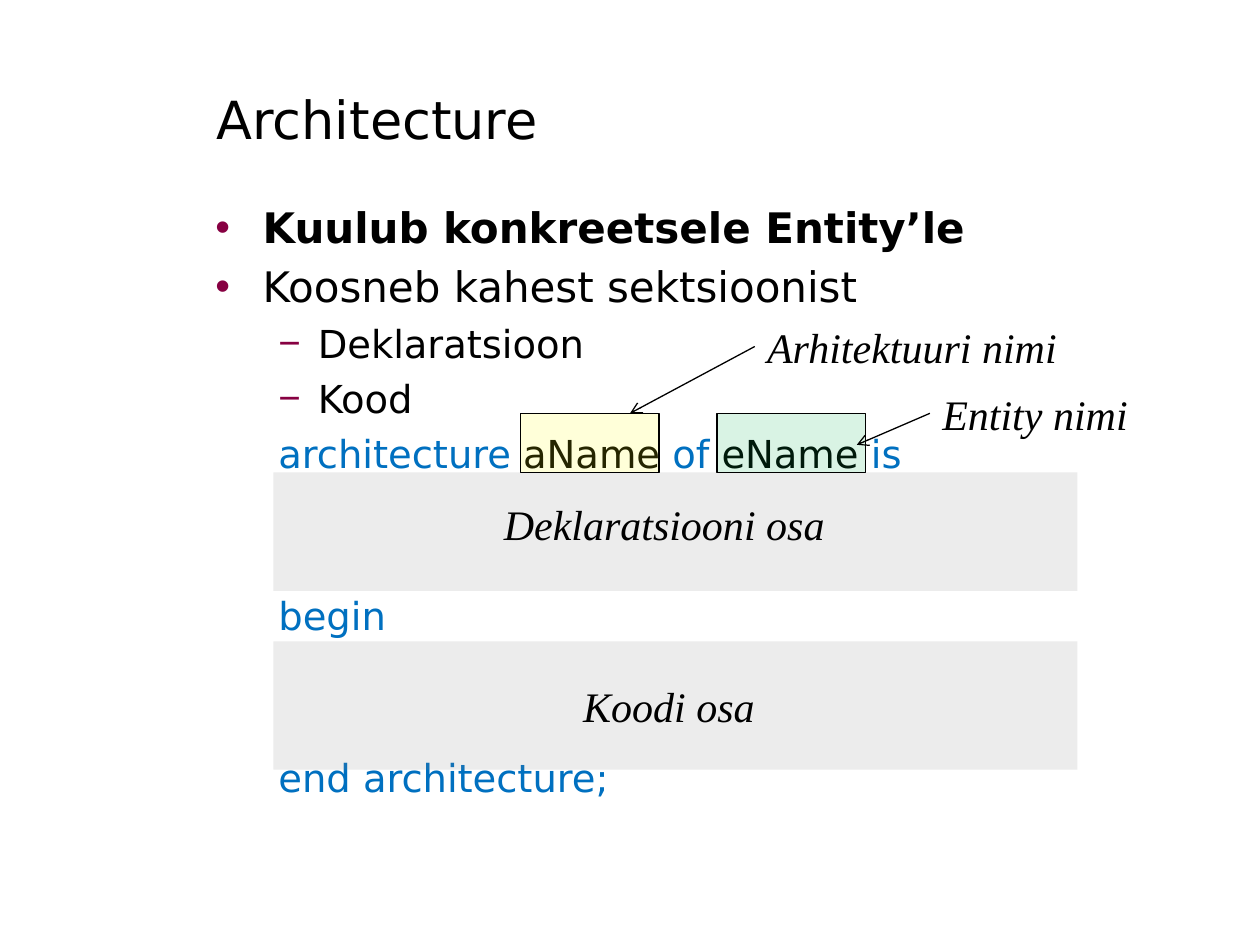
from lxml.etree import SubElement
from pptx import Presentation
from pptx.dml.color import RGBColor
from pptx.enum.shapes import MSO_CONNECTOR, MSO_SHAPE
from pptx.enum.text import MSO_ANCHOR, MSO_AUTO_SIZE, PP_ALIGN
from pptx.oxml.ns import qn
from pptx.util import Pt

SANS, SERIF = "DejaVu Sans", "Times New Roman"
BLACK, KEYWORD, BULLET = "000000", "0070C0", "870042"
GREY, YELLOW, GREEN = "808080", "FFFF00", "00B050"

TITLE = "Architecture"
TITLE_BOX = (116.6, 33.8, 535.7, 67.7)
BODY_BOX = (115.9, 111.6, 538.6, 380.9)
GAP, BAND_GAP = 5, 66.4

# level -> size, left margin, hanging indent, bullet
BULLET_STYLES = {0: (24, 27, -27, "•"), 1: (22, 58.5, -22.5, "−")}
CODE_STYLE = (22, 36, 0, None)
BULLETS = [
    (0, "Kuulub konkreetsele Entity’le", True),
    (0, "Koosneb kahest sektsioonist", False),
    (1, "Deklaratsioon", False),
    (1, "Kood", False),
]
# space before, coloured pieces
CODE = [
    (GAP, [("architecture", KEYWORD), (" aName ", BLACK), ("of ", KEYWORD),
           ("eName ", BLACK), ("is", KEYWORD)]),
    (BAND_GAP, [("begin", KEYWORD)]),
    (BAND_GAP, [("end architecture;", KEYWORD)]),
]
# box, fill, outlined
HIGHLIGHTS = [
    ((156.2, 270, 459.4, 67.7), GREY, False),
    ((156.2, 366.5, 459.4, 73.4), GREY, False),
    ((297.4, 236.2, 79.2, 33.8), YELLOW, True),
    ((409.7, 236.2, 85, 33.8), GREEN, True),
]
LABELS = [
    ("Deklaratsiooni osa", (280.8, 281.5, 209.5, 36)),
    ("Koodi osa", (326.2, 385.2, 153.4, 36)),
    ("Arhitektuuri nimi", (431.3, 180, 199.4, 36)),
    ("Entity nimi", (531.4, 218.2, 141.8, 36)),
]
ARROWS = [(431.3, 198, 360, 236.2), (531.4, 236.2, 489.6, 254.2)]


def rgb(value):
    return RGBColor.from_string(value)


def points(values):
    return [Pt(value) for value in values]


def place(shape, box):
    shape.left, shape.top, shape.width, shape.height = points(box)


def set_font(font, name, size, color=None, bold=False, italic=False):
    font.name, font.size, font.bold, font.italic = name, Pt(size), bold, italic
    if color:
        font.color.rgb = rgb(color)


def add_line(frame, index, style, level, gap, pieces, bold=False):
    """Add one body paragraph made of (text, colour) pieces."""
    size, margin, indent, bullet = style
    paragraph = frame.paragraphs[0] if index == 0 else frame.add_paragraph()
    paragraph.level = level
    paragraph.space_before = Pt(gap if index else 0)
    properties = paragraph._p.get_or_add_pPr()
    properties.set("marL", str(Pt(margin)))
    properties.set("indent", str(Pt(indent)))
    if bullet:
        color = SubElement(properties, qn("a:buClr"))
        SubElement(color, qn("a:srgbClr"), val=BULLET)
        SubElement(properties, qn("a:buChar"), char=bullet)
    else:
        SubElement(properties, qn("a:buNone"))
    shared = pieces[0][1] if len(pieces) == 1 else None
    set_font(paragraph.font, SANS, size, shared, bold)
    for text, color in pieces:
        run = paragraph.add_run()
        run.text = text
        if not shared:
            run.font.color.rgb = rgb(color)


def add_highlight(shapes, box, color, outlined):
    rect = shapes.add_shape(MSO_SHAPE.RECTANGLE, *points(box))
    rect.shadow.inherit = False
    rect.fill.solid()
    rect.fill.fore_color.rgb = rgb(color)
    fill_color = rect._element.spPr.find(qn("a:solidFill"))[0]
    SubElement(fill_color, qn("a:alpha"), val="15000")
    if outlined:
        rect.line.color.rgb = rgb(BLACK)
        rect.line.width = Pt(0.75)
    else:
        rect.line.fill.background()


def add_label(shapes, text, box):
    frame = shapes.add_textbox(*points(box)).text_frame
    frame.word_wrap = True
    frame.text = text
    set_font(frame.paragraphs[0].font, SERIF, 24, BLACK, italic=True)


def add_arrow(shapes, ends):
    arrow = shapes.add_connector(MSO_CONNECTOR.STRAIGHT, *points(ends))
    arrow.line.color.rgb = rgb(BLACK)
    arrow.line.width = Pt(0.75)
    SubElement(arrow.line._get_or_add_ln(), qn("a:tailEnd"), type="arrow")
    SubElement(arrow._element.spPr, qn("a:effectLst"))


def main():
    deck = Presentation()
    deck.slide_width, deck.slide_height = Pt(720), Pt(540)
    slide = deck.slides.add_slide(deck.slide_layouts[1])
    shapes = slide.shapes

    place(shapes.title, TITLE_BOX)
    title = shapes.title.text_frame
    title.text = TITLE
    title.auto_size = MSO_AUTO_SIZE.NONE
    title.vertical_anchor = MSO_ANCHOR.MIDDLE
    title.paragraphs[0].alignment = PP_ALIGN.LEFT
    set_font(title.paragraphs[0].font, SANS, 30, BLACK)

    body = slide.placeholders[1]
    place(body, BODY_BOX)
    frame = body.text_frame
    frame.auto_size = MSO_AUTO_SIZE.NONE
    for index, (level, text, bold) in enumerate(BULLETS):
        add_line(frame, index, BULLET_STYLES[level], level, GAP, [(text, BLACK)], bold)
    for index, (gap, pieces) in enumerate(CODE, len(BULLETS)):
        add_line(frame, index, CODE_STYLE, 1, gap, pieces)

    for highlight in HIGHLIGHTS:
        add_highlight(shapes, *highlight)
    for label in LABELS:
        add_label(shapes, *label)
    for ends in ARROWS:
        add_arrow(shapes, ends)
    deck.save("out.pptx")


if __name__ == "__main__":
    main()
